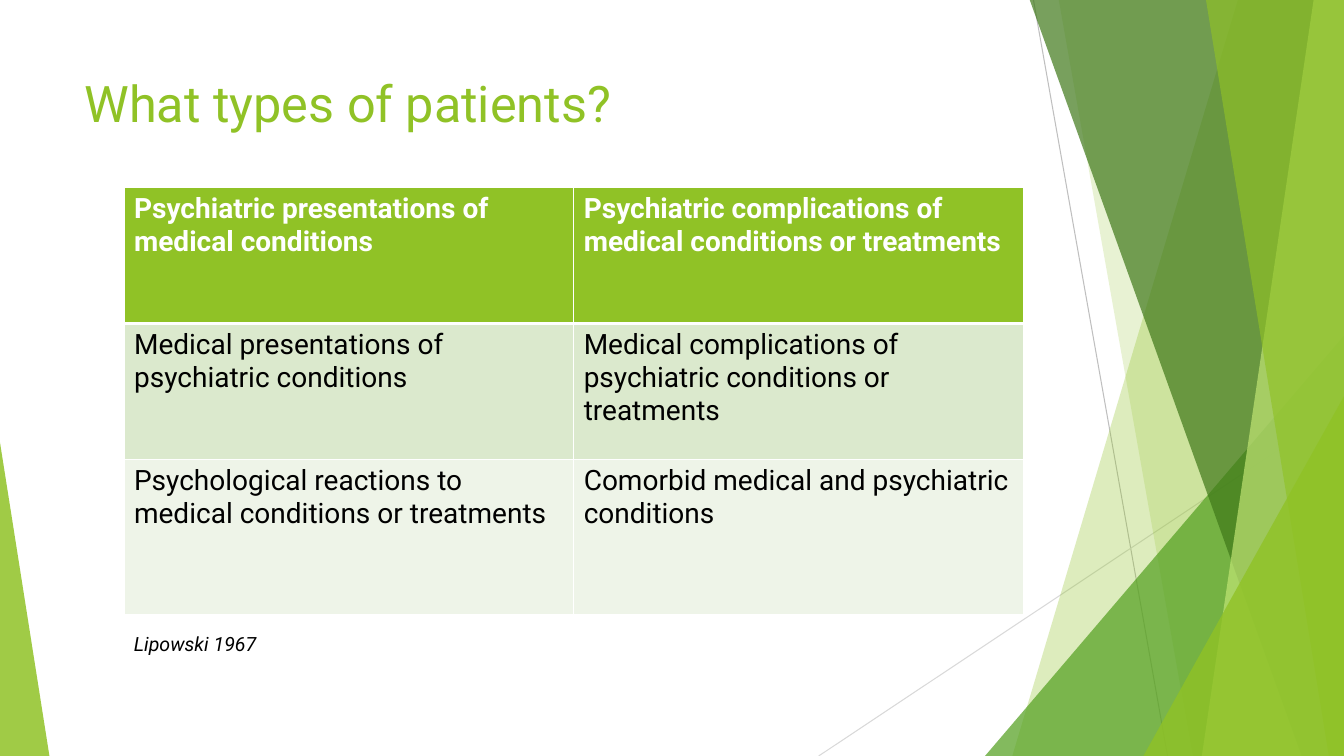
import dataclasses

import lxml.etree
import pptx
import pptx.dml.color
import pptx.enum.shapes
import pptx.enum.text
import pptx.oxml.ns
import pptx.util

Inches = pptx.util.Inches
Pt = pptx.util.Pt
qn = pptx.oxml.ns.qn

FONT = "Roboto"
GREEN, WHITE, BLACK = "90C226", "FFFFFF", "000000"
TOP, BOTTOM, RIGHT = -0.01, 7.5, 13.33


@dataclasses.dataclass
class Ray:
    start: tuple[float, float]
    end: tuple[float, float]
    color: str


@dataclasses.dataclass
class Band:
    """Facet running to the right edge, with a slanted left side."""
    top_x: float
    bottom_x: float
    color: str
    alpha: int


@dataclasses.dataclass
class Triangle:
    """Right triangle standing on the bottom edge, peak at 0 (left) or 1 (right)."""
    left: float
    top: float
    width: float
    peak: int
    color: str
    alpha: int


@dataclasses.dataclass
class Label:
    text: str
    box: tuple[float, float, float, float]
    size: int
    color: str
    italic: bool = False


RAYS = [
    Ray((10.25, 0), (11.58, BOTTOM), "BFBFBF"),
    Ray((RIGHT, 4.03), (8.12, BOTTOM), "D9D9D9"),
]
FACETS = [
    Band(12.28, 10.04, GREEN, 30),
    Band(10.5, 11.83, GREEN, 20),
    Triangle(9.77, 3.33, 3.56, 1, "54A021", 72),
    Band(10.21, 12.91, "3F7819", 70),
    Band(13.03, 11.92, "C0E474", 70),
    Band(11.96, 13.18, GREEN, 65),
    Triangle(11.34, 3.93, 1.99, 1, GREEN, 80),
    Triangle(0, 4.39, 0.49, 0, GREEN, 85),
]
LABELS = [
    Label("What types of patients?", (0.74, 0.67, 9.4, 1.44), 36, GREEN),
    Label("Lipowski 1967", (1.23, 6.22, 2.8, 0.34), 14, BLACK, italic=True),
]
ROWS = [
    ("Psychiatric presentations of medical conditions",
     "Psychiatric complications of medical conditions or treatments"),
    ("Medical presentations of psychiatric conditions",
     "Medical complications of psychiatric conditions or treatments"),
    ("Psychological reactions to medical conditions or treatments",
     "Comorbid medical and psychiatric conditions"),
]
ROW_HEIGHTS = [1.35, 1.35, 1.54]
ROW_FILLS = [GREEN, "DBE9CD", "EEF4E8"]
COL_WIDTH = 4.46


def rgb(color: str) -> pptx.dml.color.RGBColor:
    return pptx.dml.color.RGBColor.from_string(color)


def write(tf, text: str, color: str, **font) -> None:
    r = tf.paragraphs[0].add_run()
    r.text = text
    r.font.color.rgb = rgb(color)
    for name, value in {"name": FONT, **font}.items():
        setattr(r.font, name, value)


def add_ray(s, ray: Ray) -> None:
    points = [Inches(v) for v in (*ray.start, *ray.end)]
    sp = s.shapes.add_connector(pptx.enum.shapes.MSO_CONNECTOR.STRAIGHT, *points)
    sp.line.color.rgb = rgb(ray.color)
    sp.line.width = Pt(0.75)
    lxml.etree.SubElement(sp._element.spPr, qn("a:effectLst"))


def add_facet(s, facet: Band | Triangle) -> None:
    if isinstance(facet, Band):
        corners = [(facet.top_x, TOP), (RIGHT, TOP), (RIGHT, BOTTOM), (facet.bottom_x, BOTTOM)]
        points = [(Inches(x), Inches(y)) for x, y in corners]
        builder = s.shapes.build_freeform(*points[0])
        builder.add_line_segments(points[1:], close=True)
        sp = builder.convert_to_shape()
    else:
        box = (facet.left, facet.top, facet.width, BOTTOM - facet.top)
        sp = s.shapes.add_shape(pptx.enum.shapes.MSO_SHAPE.ISOSCELES_TRIANGLE,
                                *map(Inches, box))
        sp.adjustments[0] = facet.peak
    sp.shadow.inherit = False
    sp.fill.solid()
    sp.fill.fore_color.rgb = rgb(facet.color)
    clr = sp._element.spPr.find(f"{qn('a:solidFill')}/{qn('a:srgbClr')}")
    lxml.etree.SubElement(clr, qn("a:alpha"), val=str(facet.alpha * 1000))
    sp.line.fill.background()


def add_label(s, label: Label) -> None:
    tf = s.shapes.add_textbox(*map(Inches, label.box)).text_frame
    tf.word_wrap = True
    tf.vertical_anchor = pptx.enum.text.MSO_ANCHOR.TOP
    write(tf, label.text, label.color, size=Pt(label.size), italic=label.italic)


def add_borders(cell, top: float, bottom: float) -> None:
    tcPr = cell._tc.get_or_add_tcPr()
    for side, width in {"L": 1, "R": 1, "T": top, "B": bottom}.items():
        ln = lxml.etree.SubElement(tcPr, qn(f"a:ln{side}"), w=str(Pt(width)))
        fill = lxml.etree.SubElement(ln, qn("a:solidFill"))
        lxml.etree.SubElement(fill, qn("a:srgbClr"), val=WHITE)


def add_patient_table(s) -> None:
    box = (1.23, 1.86, 2 * COL_WIDTH, sum(ROW_HEIGHTS))
    table = s.shapes.add_table(len(ROWS), 2, *map(Inches, box)).table
    for col in table.columns:
        col.width = Inches(COL_WIDTH)
    for i, texts in enumerate(ROWS):
        table.rows[i].height = Inches(ROW_HEIGHTS[i])
        header = i == 0
        for j, text in enumerate(texts):
            cell = table.cell(i, j)
            add_borders(cell, top=3 if i == 1 else 1, bottom=3 if header else 1)
            cell.fill.solid()
            cell.fill.fore_color.rgb = rgb(ROW_FILLS[i])
            write(cell.text_frame, text, WHITE if header else BLACK,
                  size=Pt(20), bold=header)


def main() -> None:
    prs = pptx.Presentation()
    prs.slide_width, prs.slide_height = Inches(RIGHT), Inches(BOTTOM)
    s = prs.slides.add_slide(prs.slide_layouts[6])

    # Decorative background
    for ray in RAYS:
        add_ray(s, ray)
    for facet in FACETS:
        add_facet(s, facet)

    # Title, table and citation
    title, citation = LABELS
    add_label(s, title)
    add_patient_table(s)
    add_label(s, citation)

    prs.save("out.pptx")


if __name__ == "__main__":
    main()
